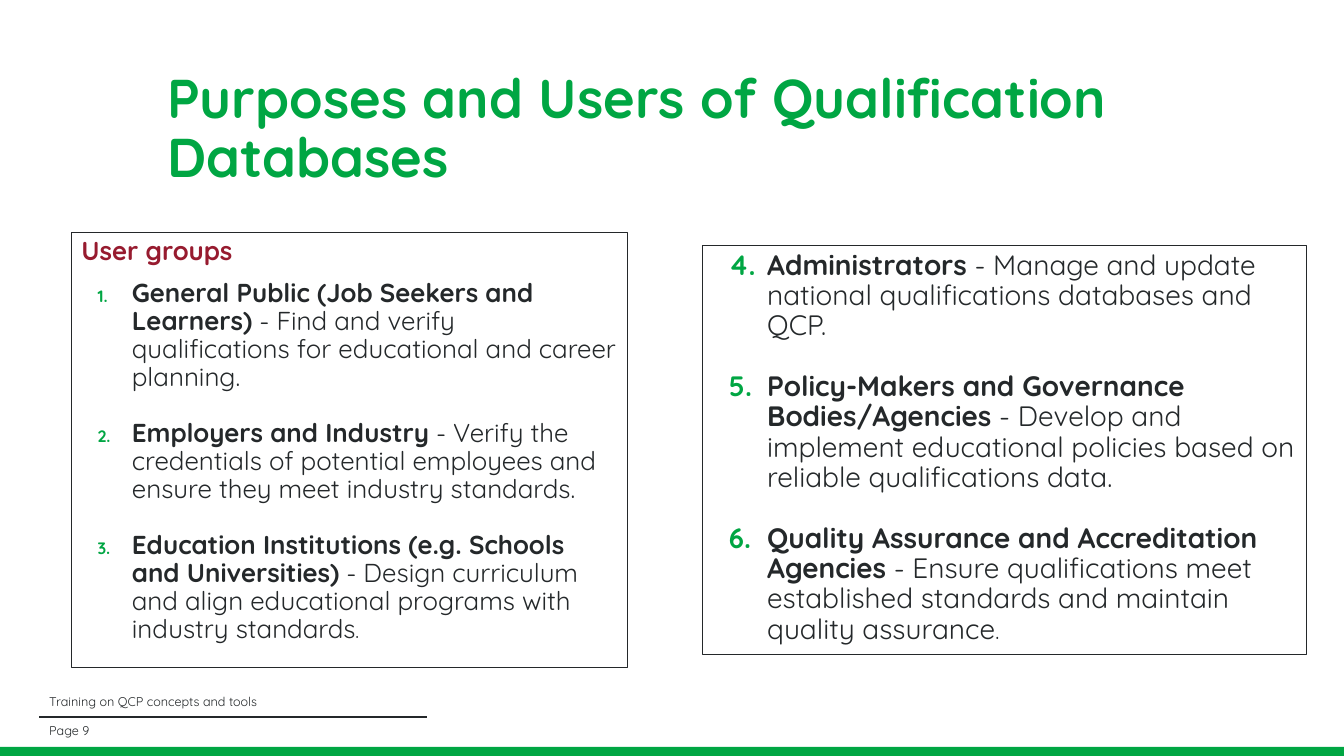
from lxml.etree import SubElement
from pptx import Presentation
from pptx.dml.color import RGBColor
from pptx.enum.shapes import MSO_CONNECTOR, MSO_SHAPE
from pptx.enum.text import MSO_ANCHOR, PP_ALIGN
from pptx.oxml.ns import qn
from pptx.util import Inches, Pt

GREEN, INK, RED = "00A643", "24282A", "971B2F"


def tint(code):
    return RGBColor.from_string(code)


class Page:
    font = "Quicksand"

    def __init__(self, slide):
        self.slide = slide

    def rect(self, x, y, w, h, fill=None, line=None):
        box = self.slide.shapes.add_shape(
            MSO_SHAPE.RECTANGLE, Inches(x), Inches(y), Inches(w), Inches(h))
        box.shadow.inherit = False
        if fill:
            box.fill.solid()
            box.fill.fore_color.rgb = tint(fill)
        else:
            box.fill.background()
        if line:
            box.line.color.rgb = tint(line)
            box.line.width = Pt(0.75)
        else:
            box.line.fill.background()
        return box

    def rule(self, x, y, end):
        line = self.slide.shapes.add_connector(
            MSO_CONNECTOR.STRAIGHT, Inches(x), Inches(y), Inches(end), Inches(y))
        line.line.color.rgb = tint(INK)
        line.line.width = Pt(1.5)
        SubElement(line._element.spPr, qn("a:effectLst"))

    def run(self, para, text, size, color=INK, bold=False):
        run = para.add_run()
        run.text = text
        run.font.name = self.font
        run.font.size = Pt(size)
        run.font.bold = bold
        run.font.color.rgb = tint(color)

    def text(self, x, y, w, h, words, size, color=INK, bold=False):
        box = self.slide.shapes.add_textbox(
            Inches(x), Inches(y), Inches(w), Inches(h))
        frame = box.text_frame
        frame.word_wrap = True
        frame.vertical_anchor = MSO_ANCHOR.MIDDLE
        para = frame.paragraphs[0]
        para.line_spacing = 0.9 if bold else 1.0
        self.run(para, words, size, color, bold)

    def number(self, para, start, scale, left, hang):
        props = para._p.get_or_add_pPr()
        props.set("marL", str(Inches(left)))
        props.set("indent", str(-Inches(hang)))
        color = SubElement(props, qn("a:buClr"))
        SubElement(color, qn("a:srgbClr"), val=GREEN)
        SubElement(props, qn("a:buSzPct"), val=str(scale * 1000))
        SubElement(props, qn("a:buFont"), typeface=self.font)
        SubElement(props, qn("a:buAutoNum"), type="arabicPeriod",
                   startAt=str(start))

    def panel(self, place, items, size, dot, start, scale, left, hang, gap,
              head=None):
        frame = self.rect(*place, line=INK).text_frame
        frame.word_wrap = True
        frame.vertical_anchor = MSO_ANCHOR.TOP
        para = frame.paragraphs[0]
        if head:
            self.run(para, head, size, RED, True)
            para.alignment = PP_ALIGN.LEFT
            para.line_spacing = 0.9
        for i, (name, task) in enumerate(items):
            if head or i:
                para = frame.add_paragraph()
            self.number(para, start, scale, left, hang)
            para.alignment = PP_ALIGN.LEFT
            para.line_spacing = 0.9
            if i:
                para.space_before = Pt(gap)
            elif head:
                para.space_before = Pt(10)
            self.run(para, name, size, bold=True)
            last = i == len(items) - 1
            self.run(para, " - " + task + ("" if last else "."), size)
            if last:
                self.run(para, ".", dot)


def main():
    deck = Presentation()
    deck.slide_width, deck.slide_height = Inches(13.33), Inches(7.5)
    page = Page(deck.slides.add_slide(deck.slide_layouts[6]))

    # Footer
    page.rect(-0.03, 7.41, 13.4, 0.13, fill=GREEN)
    page.rule(0.39, 7.11, 4.24)
    page.text(0.39, 6.86, 4.06, 0.19, "Training on QCP concepts and tools", 9)
    page.text(0.39, 7.15, 4.06, 0.19, "Page 9", 9)

    # Title
    page.text(1.56, 0.52, 11.24, 1.55,
              "Purposes and Users of Qualification Databases", 39, GREEN, True)

    # User groups
    users = [
        ("General Public (Job Seekers and Learners)",
         "Find and verify qualifications for educational and career planning"),
        ("Employers and Industry",
         "Verify the credentials of potential employees and ensure they meet "
         "industry standards"),
        ("Education Institutions (e.g. Schools and Universities)",
         "Design curriculum and align educational programs with industry "
         "standards"),
    ]
    page.panel((0.71, 2.31, 5.51, 4.31), users, 18.5, 14.8, start=1, scale=64,
               left=0.5, hang=0.34, gap=20, head="User groups")

    # Managing bodies
    bodies = [
        ("Administrators",
         "Manage and update national qualifications databases and QCP"),
        ("Policy-Makers and Governance Bodies/Agencies",
         "Develop and implement educational policies based on reliable "
         "qualifications data"),
        ("Quality Assurance and Accreditation Agencies",
         "Ensure qualifications meet established standards and maintain "
         "quality assurance"),
    ]
    page.panel((6.97, 2.44, 5.99, 4.05), bodies, 20, 16, start=4, scale=100,
               left=0.54, hang=0.38, gap=22)

    deck.save("out.pptx")


if __name__ == "__main__":
    main()
